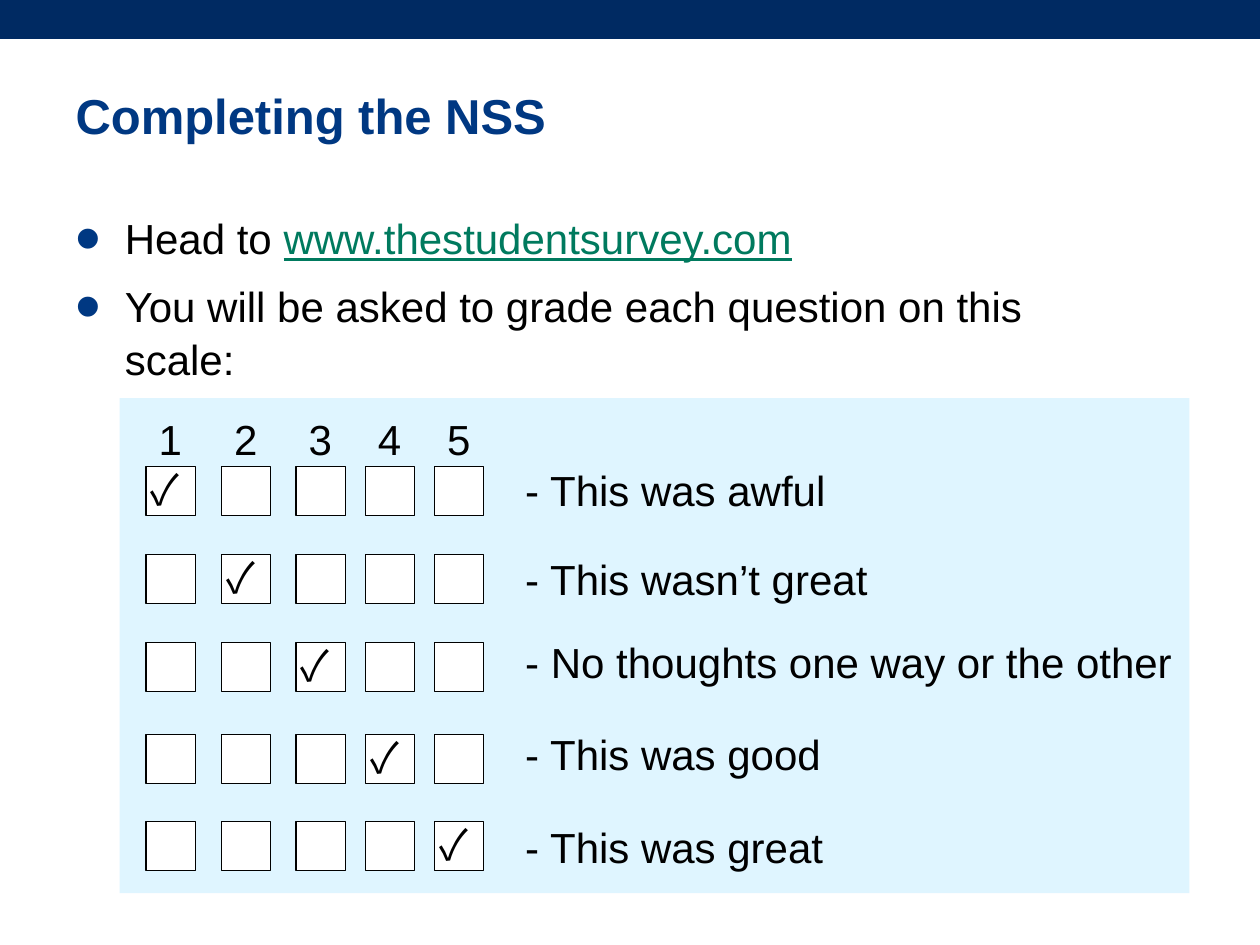
from lxml import etree
from pptx import Presentation
from pptx.dml.color import RGBColor
from pptx.enum.shapes import MSO_SHAPE
from pptx.enum.text import MSO_ANCHOR, MSO_AUTO_SIZE, PP_ALIGN
from pptx.oxml.ns import qn
from pptx.util import Inches, Pt

NAVY, BLUE, GREEN = "002A62", "003882", "007A5E"
PALE_BLUE, WHITE, BLACK = "C0ECFF", "FFFFFF", "000000"


def set_font(font, color, size=24, name="Arial"):
    font.name = name
    font.size = Pt(size)
    font.color.rgb = RGBColor.from_string(color)


def add_rectangle(left, top, width, height, fill, line=None):
    shape = slide.shapes.add_shape(
        MSO_SHAPE.RECTANGLE, Inches(left), Inches(top), Inches(width), Inches(height))
    shape.shadow.inherit = False
    shape.fill.solid()
    shape.fill.fore_color.rgb = RGBColor.from_string(fill)
    if line:
        shape.line.color.rgb = RGBColor.from_string(line)
        shape.line.width = Pt(0.75)
    else:
        shape.line.fill.background()
    return shape


presentation = Presentation()
presentation.slide_width, presentation.slide_height = Inches(10), Inches(7.5)
slide = presentation.slides.add_slide(presentation.slide_layouts[1])

# Title and bulleted body
title, body = slide.placeholders
title.left, title.top, title.width, title.height = map(Inches, (0.5, 0.6, 9.07, 0.63))
body.left, body.top, body.width, body.height = map(Inches, (0.5, 1.62, 8.6, 5.36))

title.text_frame.text = "Completing the NSS"
title.text_frame.auto_size = MSO_AUTO_SIZE.NONE
title.text_frame.vertical_anchor = MSO_ANCHOR.MIDDLE
heading = title.text_frame.paragraphs[0]
heading.alignment = PP_ALIGN.LEFT
set_font(heading.font, BLUE, 28)
heading.font.bold = True

body.text_frame.auto_size = MSO_AUTO_SIZE.NONE
intro = body.text_frame.paragraphs[0]
instruction = body.text_frame.add_paragraph()
intro.add_run().text = "Head to "
address = intro.add_run()
address.text = "www.thestudentsurvey.com"
address.font.underline = True
address.font.color.rgb = RGBColor.from_string(GREEN)
instruction.text = "You will be asked to grade each question on this scale:"
for paragraph, space_before in ((intro, 0), (instruction, 8.4)):
    paragraph.line_spacing = 1.05
    paragraph.space_before = Pt(space_before)
    properties = paragraph._p.get_or_add_pPr()
    properties.set("marL", str(Inches(0.39)))
    properties.set("indent", str(Inches(-0.39)))
    bullet_color = etree.SubElement(properties, qn("a:buClr"))
    etree.SubElement(bullet_color, qn("a:srgbClr"), val=BLUE)
    etree.SubElement(properties, qn("a:buSzPct"), val="175000")
    etree.SubElement(properties, qn("a:buFont"), typeface="Arial")
    etree.SubElement(properties, qn("a:buChar"), char="•")
    set_font(paragraph.font, BLACK)

# Top band and half-transparent panel
add_rectangle(0, 0, 10, 0.31, NAVY)
panel = add_rectangle(0.95, 3.16, 8.49, 3.93, PALE_BLUE)
panel_color = panel.fill._xPr.find(qn("a:solidFill"))[0]
etree.SubElement(panel_color, qn("a:alpha"), val="50000")

# Answer grid: each row ticks the box on the diagonal
column_lefts = [1.16, 1.76, 2.35, 2.9, 3.45]
row_tops = [3.7, 4.4, 5.1, 5.83, 6.52]
labels = [
    ("- This was awful", 3.64),
    ("- This wasn’t great", 4.34),
    ("- No thoughts one way or the other", 5),
    ("- This was good", 5.73),
    ("- This was great", 6.47),
]
texts = []
for number, (left, top, (label, label_top)) in enumerate(
        zip(column_lefts, row_tops, labels), start=1):
    for box_left in column_lefts:
        add_rectangle(box_left, top, 0.39, 0.39, WHITE, BLACK)
    texts.append((str(number), left, 3.23, 0.39, "Arial"))
    texts.append(("✓", left - 0.06, top - 0.07, 0.57, "Noto Sans CJK JP"))
    texts.append((label, 4.07, label_top, 5.55, "Arial"))

for text, left, top, width, font_name in texts:
    text_box = slide.shapes.add_textbox(
        Inches(left), Inches(top), Inches(width), Inches(0.5))
    text_box.text_frame.word_wrap = True
    text_box.text_frame.text = text
    set_font(text_box.text_frame.paragraphs[0].font, BLACK, name=font_name)

presentation.save("out.pptx")
